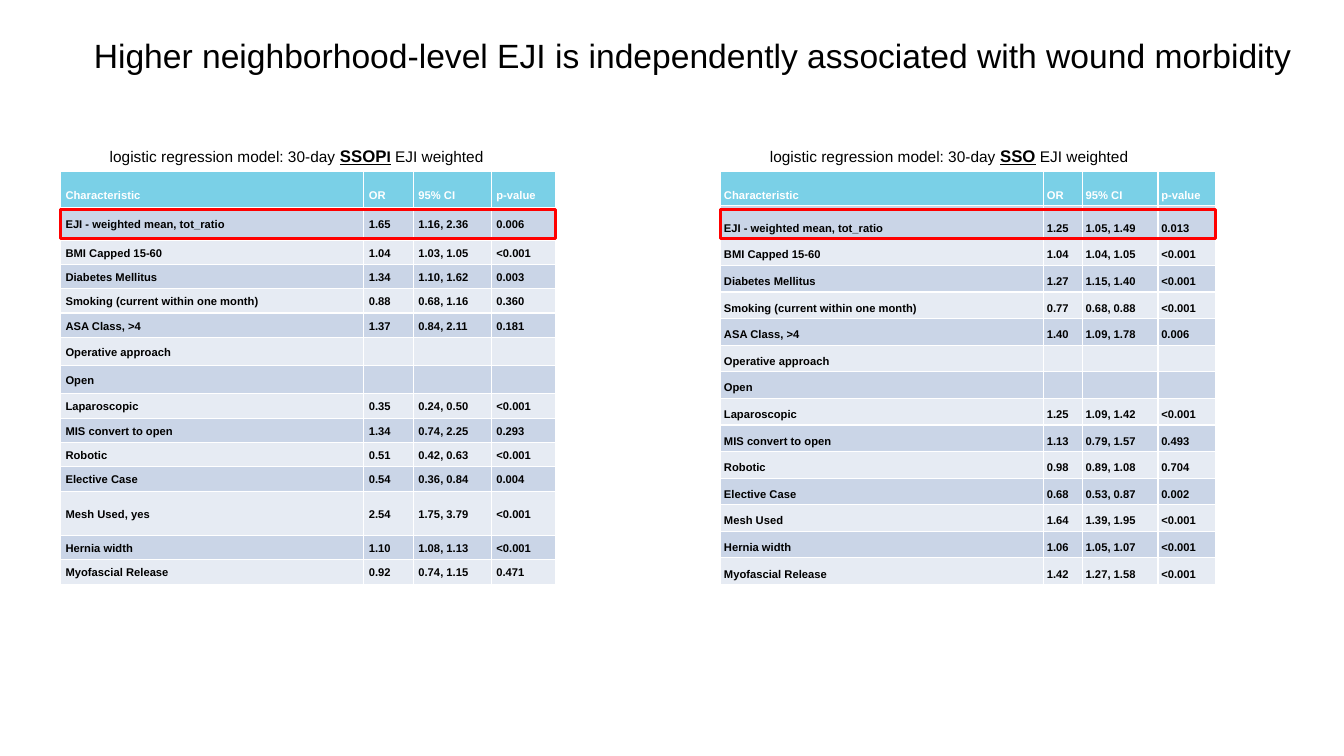
from dataclasses import dataclass

from lxml import etree
from pptx import Presentation
from pptx.dml.color import RGBColor
from pptx.enum import shapes, text
from pptx.oxml import ns
from pptx.util import Pt

BLACK = RGBColor(0x00, 0x00, 0x00)
WHITE = RGBColor(0xFF, 0xFF, 0xFF)
HEADER_BLUE = RGBColor(0x7A, 0xD0, 0xE7)
BAND_DARK = RGBColor(0xCA, 0xD5, 0xE7)
BAND_LIGHT = RGBColor(0xE6, 0xEB, 0xF3)
HIGHLIGHT_RED = RGBColor(0xFF, 0x00, 0x00)

FONT = "Arial"
TABLE_TOP, TABLE_WIDTH, TABLE_HEIGHT = 122.4, 353.5, 295.2
CELL_SIZE = 8
HEADER = ("Characteristic", "OR", "95% CI", "p-value")


@dataclass(frozen=True)
class CellStyle:
    anchor: text.MSO_ANCHOR
    side: float
    top: float
    bottom: float


@dataclass(frozen=True)
class Outcome:
    """Emphasised runs of the caption are (text, size) pairs."""
    left: float
    caption_left: float
    emphasis: tuple[tuple[str, int], ...]
    columns: tuple[float, ...]
    heights: tuple[float, ...]
    header_style: CellStyle
    body_style: CellStyle
    rows: tuple[tuple[str, ...], ...]


ROOMY_BOTTOM = CellStyle(text.MSO_ANCHOR.BOTTOM, 3.6, 3.6, 4.3)
TIGHT_MIDDLE = CellStyle(text.MSO_ANCHOR.MIDDLE, 3.6, 0.7, 0.7)
TIGHT_BOTTOM = CellStyle(text.MSO_ANCHOR.BOTTOM, 2.3, 2.3, 2.9)

SSOPI = Outcome(
    left=43.2, caption_left=71.3, emphasis=(("SSOP", 12), ("I", 11)),
    columns=(216.7, 35.4, 55.7, 45.7),
    heights=(25.9, 23.2, *[17.4] * 4, 20.2, 20.2, *[17.4] * 4, 31.7, 17.4, 17.4),
    header_style=ROOMY_BOTTOM, body_style=TIGHT_MIDDLE,
    rows=(
        ("EJI - weighted mean, tot_ratio", "1.65", "1.16, 2.36", "0.006"),
        ("BMI Capped 15-60", "1.04", "1.03, 1.05", "<0.001"),
        ("Diabetes Mellitus", "1.34", "1.10, 1.62", "0.003"),
        ("Smoking (current within one month)", "0.88", "0.68, 1.16", "0.360"),
        ("ASA Class, >4", "1.37", "0.84, 2.11", "0.181"),
        ("Operative approach", "", "", ""),
        ("Open", "", "", ""),
        ("Laparoscopic", "0.35", "0.24, 0.50", "<0.001"),
        ("MIS convert to open", "1.34", "0.74, 2.25", "0.293"),
        ("Robotic", "0.51", "0.42, 0.63", "<0.001"),
        ("Elective Case", "0.54", "0.36, 0.84", "0.004"),
        ("Mesh Used, yes", "2.54", "1.75, 3.79", "<0.001"),
        ("Hernia width", "1.10", "1.08, 1.13", "<0.001"),
        ("Myofascial Release", "0.92", "0.74, 1.15", "0.471"),
    ),
)
SSO = Outcome(
    left=514.8, caption_left=542.9, emphasis=(("SSO", 12),),
    columns=(230.7, 27.7, 54, 41.1),
    heights=(24.5, 23.7, *[19] * 13),
    header_style=TIGHT_BOTTOM, body_style=TIGHT_BOTTOM,
    rows=(
        ("EJI - weighted mean, tot_ratio", "1.25", "1.05, 1.49", "0.013"),
        ("BMI Capped 15-60", "1.04", "1.04, 1.05", "<0.001"),
        ("Diabetes Mellitus", "1.27", "1.15, 1.40", "<0.001"),
        ("Smoking (current within one month)", "0.77", "0.68, 0.88", "<0.001"),
        ("ASA Class, >4", "1.40", "1.09, 1.78", "0.006"),
        ("Operative approach", "", "", ""),
        ("Open", "", "", ""),
        ("Laparoscopic", "1.25", "1.09, 1.42", "<0.001"),
        ("MIS convert to open", "1.13", "0.79, 1.57", "0.493"),
        ("Robotic", "0.98", "0.89, 1.08", "0.704"),
        ("Elective Case", "0.68", "0.53, 0.87", "0.002"),
        ("Mesh Used", "1.64", "1.39, 1.95", "<0.001"),
        ("Hernia width", "1.06", "1.05, 1.07", "<0.001"),
        ("Myofascial Release", "1.42", "1.27, 1.58", "<0.001"),
    ),
)


def set_font(paragraph, size: float, color: RGBColor, bold: bool = False) -> None:
    font = paragraph.font
    font.name, font.size, font.bold = FONT, Pt(size), bold
    font.color.rgb = color


def add_title(slide, wording: str) -> None:
    title = slide.shapes.title
    title.left, title.top, title.width, title.height = Pt(59.8), Pt(21.6), Pt(882), Pt(36)
    frame = title.text_frame
    frame.text = wording
    frame.vertical_anchor = text.MSO_ANCHOR.TOP
    frame.auto_size = text.MSO_AUTO_SIZE.NONE
    frame.paragraphs[0].alignment = text.PP_ALIGN.LEFT
    set_font(frame.paragraphs[0], 24, BLACK)


def add_caption(slide, outcome: Outcome) -> None:
    box = slide.shapes.add_textbox(Pt(outcome.caption_left), Pt(100.8), Pt(297.4), Pt(21.6))
    box.text_frame.word_wrap = True
    paragraph = box.text_frame.paragraphs[0]
    set_font(paragraph, 11, BLACK)
    paragraph.add_run().text = "logistic regression model: 30-day "
    for wording, size in outcome.emphasis:
        run = paragraph.add_run()
        run.text = wording
        run.font.size = Pt(size)
        run.font.bold = run.font.underline = True
    paragraph.add_run().text = " EJI weighted"


def fill_cell(cell, wording: str, style: CellStyle, fill: RGBColor, color: RGBColor) -> None:
    cell.fill.solid()
    cell.fill.fore_color.rgb = fill
    cell.vertical_anchor = style.anchor
    cell.margin_left = cell.margin_right = Pt(style.side)
    cell.margin_top, cell.margin_bottom = Pt(style.top), Pt(style.bottom)
    cell.text = wording
    paragraph = cell.text_frame.paragraphs[0]
    paragraph.line_spacing = 1.15
    paragraph.space_after = Pt(8)
    set_font(paragraph, CELL_SIZE, color, bold=True)
    if not wording:
        # Keeps an empty cell from stretching its row
        etree.SubElement(paragraph._p, ns.qn("a:endParaRPr"), sz=str(CELL_SIZE * 100))


def add_outcome_table(slide, outcome: Outcome) -> None:
    lines = (HEADER, *outcome.rows)
    table = slide.shapes.add_table(
        len(lines), len(HEADER), Pt(outcome.left), Pt(TABLE_TOP), Pt(TABLE_WIDTH), Pt(TABLE_HEIGHT)
    ).table
    for column, width in zip(table.columns, outcome.columns):
        column.width = Pt(width)
    for number, (row, height, line) in enumerate(zip(table.rows, outcome.heights, lines)):
        row.height = Pt(height)
        if number == 0:
            look = (outcome.header_style, HEADER_BLUE, WHITE)
        else:
            look = (outcome.body_style, BAND_DARK if number % 2 else BAND_LIGHT, BLACK)
        for cell, wording in zip(row.cells, line):
            fill_cell(cell, wording, *look)


def add_highlight(slide, outcome: Outcome) -> None:
    frame = slide.shapes.add_shape(
        shapes.MSO_SHAPE.RECTANGLE, Pt(outcome.left), Pt(149.8), Pt(TABLE_WIDTH), Pt(20.4)
    )
    frame.shadow.inherit = False
    frame.fill.background()
    frame.line.color.rgb = HIGHLIGHT_RED
    frame.line.width = Pt(2.25)


def main() -> None:
    deck = Presentation()
    deck.slide_width, deck.slide_height = Pt(960), Pt(540)
    slide = deck.slides.add_slide(deck.slide_layouts[5])

    add_title(slide, "Higher neighborhood-level EJI is independently associated with wound morbidity")

    # One regression model per wound outcome
    for outcome in (SSOPI, SSO):
        add_caption(slide, outcome)
        add_outcome_table(slide, outcome)
        add_highlight(slide, outcome)

    deck.save("out.pptx")


if __name__ == "__main__":
    main()
